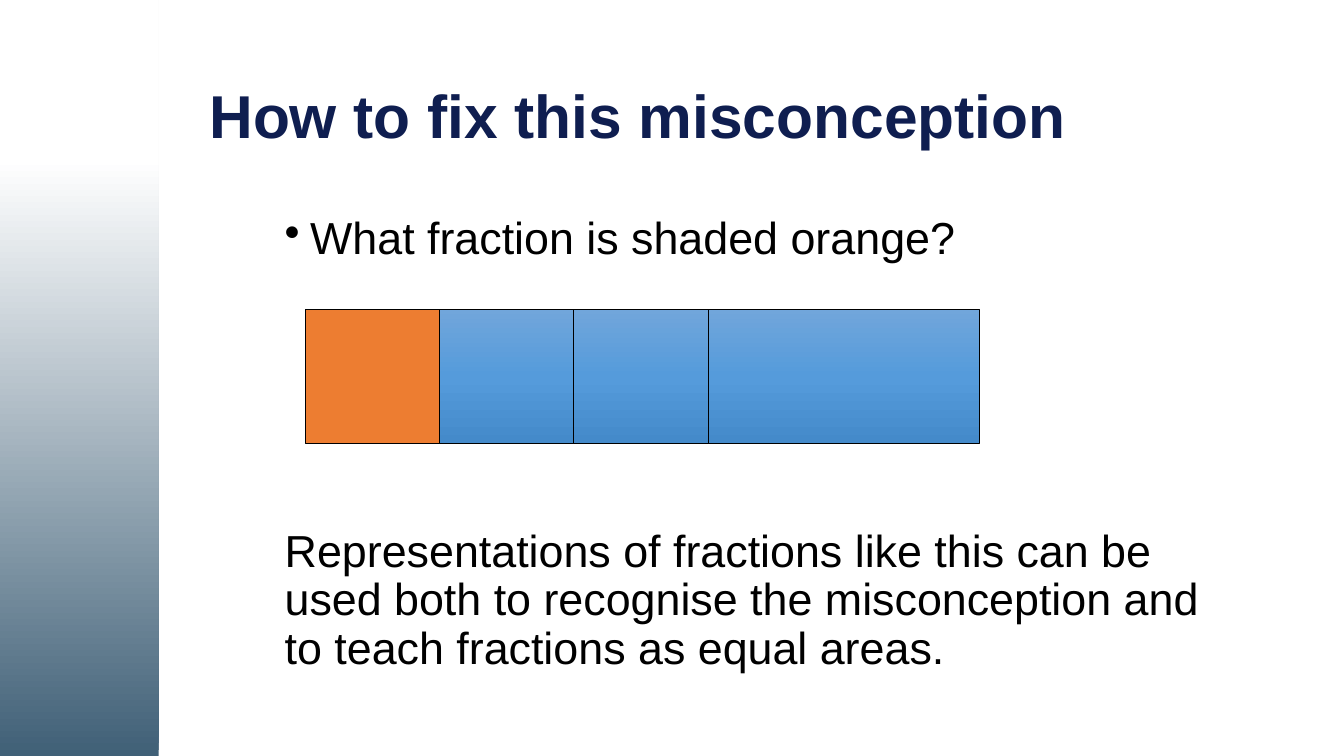
"""Build the slide about fixing a misconception with unequal fraction parts."""
from copy import deepcopy

from pptx import Presentation
from pptx.dml.color import RGBColor
from pptx.enum.shapes import MSO_SHAPE
from pptx.enum.text import MSO_ANCHOR
from pptx.oxml.ns import qn
from pptx.util import Inches, Pt

RECTANGLE = MSO_SHAPE.RECTANGLE
TOP = MSO_ANCHOR.TOP
MIDDLE = MSO_ANCHOR.MIDDLE

WHITE = RGBColor(0xFF, 0xFF, 0xFF)
BLACK = RGBColor(0x00, 0x00, 0x00)
NAVY = RGBColor(0x0F, 0x1E, 0x50)
SLATE = RGBColor(0x40, 0x60, 0x77)
ORANGE = RGBColor(0xED, 0x7D, 0x31)
LIGHT_BLUE = RGBColor(0x71, 0xA6, 0xDB)
MID_BLUE = RGBColor(0x55, 0x9B, 0xDB)
DEEP_BLUE = RGBColor(0x44, 0x8A, 0xCA)

BLUE_STOPS = [(0, LIGHT_BLUE), (0.5, MID_BLUE), (1, DEEP_BLUE)]


def set_gradient(shape, colour_stops, angle):
    fill = shape.fill
    fill.gradient()
    fill.gradient_angle = angle
    stop_list = shape._element.spPr.find(qn("a:gradFill")).find(qn("a:gsLst"))
    while len(stop_list) < len(colour_stops):
        stop_list.append(deepcopy(stop_list[0]))
    for stop, (position, colour) in zip(fill.gradient_stops, colour_stops):
        stop.position = position
        stop.color.rgb = colour


def add_paragraph(frame, text, size, colour, bold=False, bullet=False, before=0):
    paragraph = frame.add_paragraph() if frame.text else frame.paragraphs[0]
    if bullet:
        properties = paragraph._p.get_or_add_pPr()
        properties.set("marL", str(Inches(0.19)))
        properties.set("indent", str(-Inches(0.19)))
        properties.append(properties.makeelement(qn("a:buChar"), {"char": "•"}))
    paragraph.line_spacing = 0.9
    paragraph.space_before = Pt(before)
    paragraph.font.size = Pt(size)
    run = paragraph.add_run()
    run.text = text
    run.font.name = "Arial"
    run.font.size = Pt(size)
    run.font.bold = bold
    run.font.color.rgb = colour


presentation = Presentation()
presentation.slide_width = Inches(10)
presentation.slide_height = Inches(10) * 9 // 16
slide = presentation.slides.add_slide(presentation.slide_layouts[6])

side_band = slide.shapes.add_shape(
    RECTANGLE, 0, 0, Inches(1.18), presentation.slide_height)
side_band.shadow.inherit = False
side_band.line.fill.background()
set_gradient(side_band, [(0, SLATE), (0.79, WHITE)], 90)

frames = []
for left, top, height, anchor in [(1.46, 0.37, 1.03, MIDDLE), (2.02, 1.56, 3.69, TOP)]:
    box = slide.shapes.add_textbox(Inches(left), Inches(top), Inches(7.23), Inches(height))
    frame = box.text_frame
    frame.word_wrap = True
    frame.vertical_anchor = anchor
    frames.append(frame)
title_frame, body_frame = frames

add_paragraph(title_frame, "How to fix this misconception", 32.4, NAVY, bold=True)
add_paragraph(body_frame, "What fraction is shaded orange?", 24, BLACK, bullet=True)
add_paragraph(
    body_frame,
    "Representations of fractions like this can be used both to recognise "
    "the misconception and to teach fractions as equal areas.",
    24, BLACK, before=141.5,
)

for index, width in enumerate([1, 1, 1, 2.02]):
    part = slide.shapes.add_shape(
        RECTANGLE, Inches(2.27 + index), Inches(2.3), Inches(width), Inches(1))
    part.shadow.inherit = False
    part.line.color.rgb = BLACK
    part.line.width = Pt(0.5)
    if index == 0:
        part.fill.solid()
        part.fill.fore_color.rgb = ORANGE
    else:
        set_gradient(part, BLUE_STOPS, 270)

presentation.save("out.pptx")
